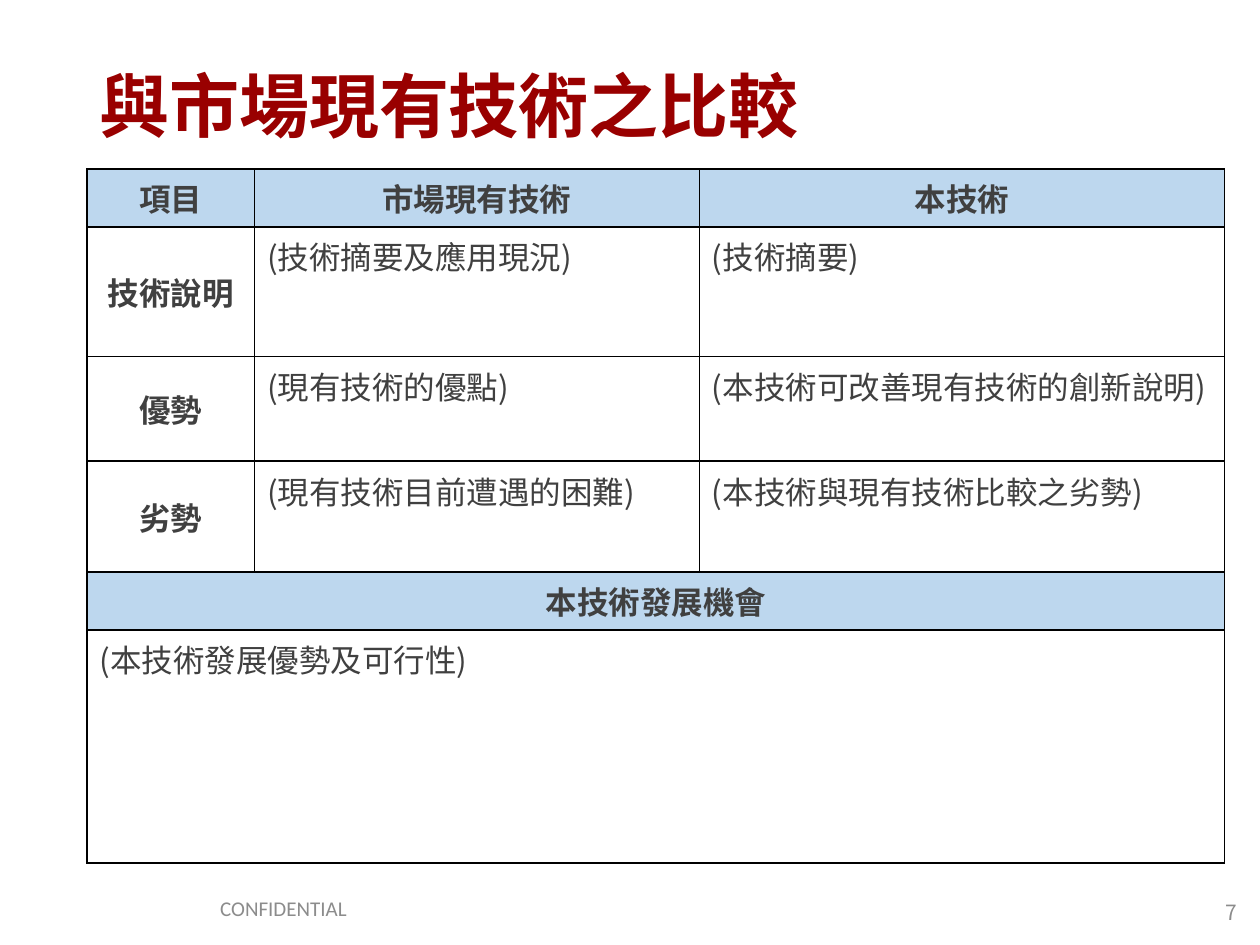
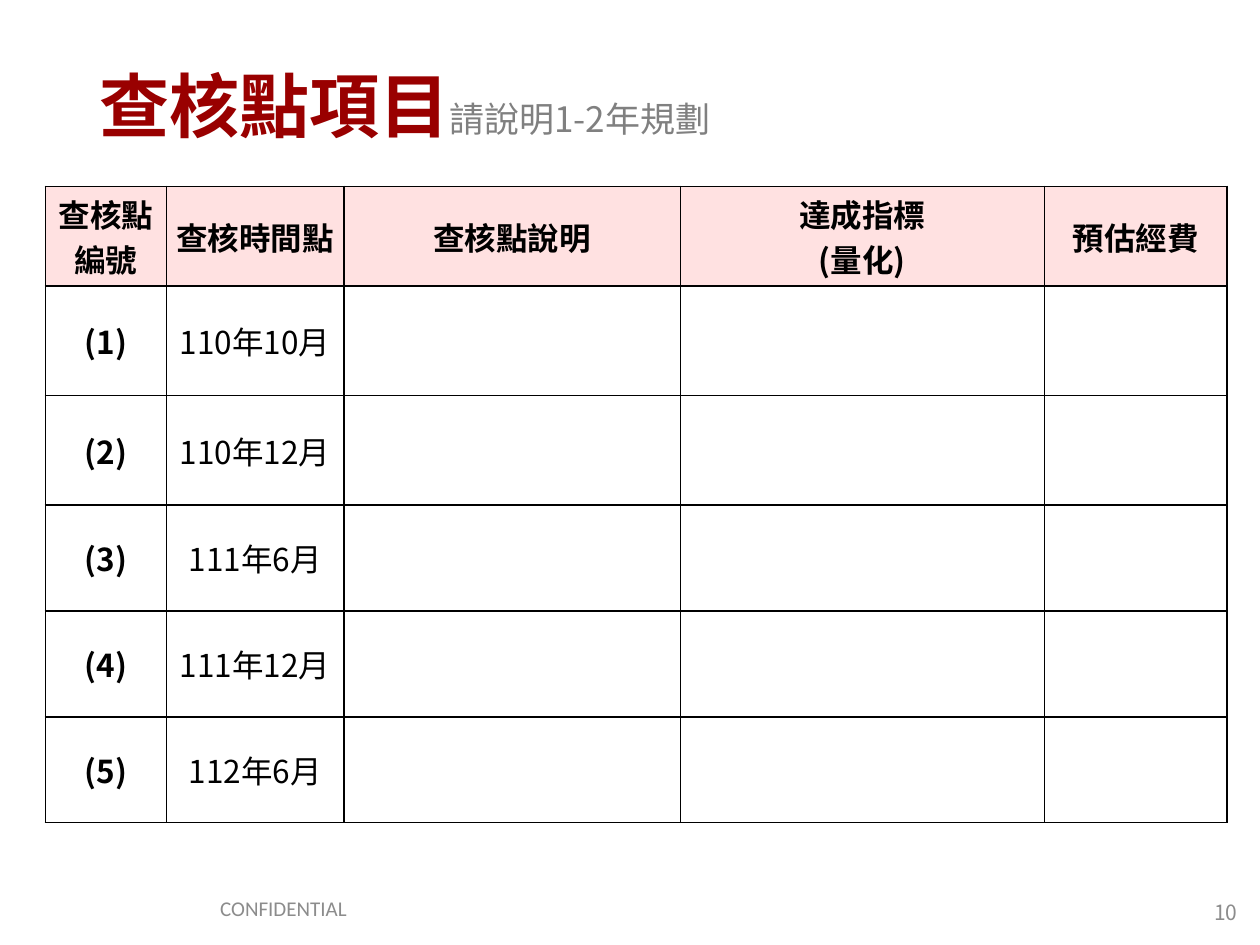
from dataclasses import dataclass
from typing import Optional

from lxml import etree
from pptx import Presentation
from pptx import util as u
from pptx.dml.color import RGBColor
from pptx.enum import text
from pptx.oxml.ns import qn

COLORS = {
    "title": "990000", "subtitle": "808080", "footer": "8C8C8C",
    "body": "404040", "black": "000000", "white": "FFFFFF",
    "blue": "BDD7EE", "pink": "FFE1E1",
}
CJK = "Noto Sans CJK SC"
LATIN = "Calibri"
CENTER, LEFT, RIGHT = text.PP_ALIGN.CENTER, text.PP_ALIGN.LEFT, text.PP_ALIGN.RIGHT
MIDDLE, TOP = text.MSO_ANCHOR.MIDDLE, text.MSO_ANCHOR.TOP


def grid(units: float) -> int:
    """The slide is 100 columns by 75 rows of square units."""
    return u.Inches(units / 10)


@dataclass
class Style:
    size: int
    color: str
    bold: bool = False
    font: str = CJK
    align: text.PP_ALIGN = LEFT


@dataclass
class CellSpec:
    words: str
    style: Style
    fill: Optional[str] = None
    anchor: text.MSO_ANCHOR = MIDDLE
    span: int = 1


@dataclass
class TableSpec:
    left: float
    top: float
    cols: list[float]
    rows: list[float]
    cells: list[list[CellSpec]]
    margins: tuple[float, float]


TITLE = Style(40, "title", True)
SUBTITLE = Style(20, "subtitle")
FOOTER = Style(12, "footer", font=LATIN, align=CENTER)
NUMBER = Style(12, "footer", align=RIGHT)
LABEL = Style(18, "body", True, align=CENTER)
NOTE = Style(18, "body")
HEAD = Style(18, "black", True, align=CENTER)
DATE = Style(18, "black", align=CENTER)


# Text
def style_run(r, style: Style) -> None:
    r.font.size = u.Pt(style.size)
    r.font.bold = style.bold
    r.font.color.rgb = RGBColor.from_string(COLORS[style.color])
    r.font.name = style.font
    ea = etree.SubElement(r.font._element, qn("a:ea"))
    ea.set("typeface", style.font)


def add_text(slide, left: float, top: float, width: float, height: float,
             parts: list[tuple[str, Style]], spacing: float = 1.0) -> None:
    sp = slide.shapes.add_textbox(*map(grid, (left, top, width, height)))
    tf = sp.text_frame
    tf.word_wrap = True
    tf.vertical_anchor = MIDDLE
    p = tf.paragraphs[0]
    p.alignment = parts[0][1].align
    p.line_spacing = spacing
    for words, style in parts:
        r = p.add_run()
        r.text = words
        style_run(r, style)


# Tables
def add_borders(cell) -> None:
    tc_pr = cell._tc.get_or_add_tcPr()
    for i, side in enumerate(("lnL", "lnR", "lnT", "lnB")):
        ln = etree.Element(qn(f"a:{side}"), w=str(u.Pt(1)))
        fill = etree.SubElement(ln, qn("a:solidFill"))
        etree.SubElement(fill, qn("a:srgbClr"), val=COLORS["black"])
        tc_pr.insert(i, ln)


def fill_cell(cell, spec: CellSpec, margins: tuple[float, float]) -> None:
    cell.margin_left = cell.margin_right = grid(margins[0])
    cell.margin_top = cell.margin_bottom = grid(margins[1])
    cell.vertical_anchor = spec.anchor
    if spec.fill:
        cell.fill.solid()
        cell.fill.fore_color.rgb = RGBColor.from_string(COLORS[spec.fill])
    else:
        cell.fill.background()
    cell.text_frame.text = spec.words
    for p in cell.text_frame.paragraphs:
        p.alignment = spec.style.align
        for r in p.runs:
            style_run(r, spec.style)


def add_table(slide, spec: TableSpec) -> None:
    frame = slide.shapes.add_table(
        len(spec.rows), len(spec.cols), grid(spec.left), grid(spec.top),
        grid(sum(spec.cols)), grid(sum(spec.rows)))
    table = frame.table
    table.first_row = table.horz_banding = False
    for col, width in zip(table.columns, spec.cols):
        col.width = grid(width)
    for row, height in zip(table.rows, spec.rows):
        row.height = grid(height)
    for i, row in enumerate(spec.cells):
        for j, item in enumerate(row):
            cell = table.cell(i, j)
            if item.span > 1:
                cell.merge(table.cell(i, j + item.span - 1))
            fill_cell(cell, item, spec.margins)
    for cell in table.iter_cells():
        add_borders(cell)


# Title, footer and page number shared by the slides
def add_page(prs, title: list[tuple[str, Style]], number: int, table: TableSpec) -> None:
    slide = prs.slides.add_slide(prs.slide_layouts[6])
    add_text(slide, 6.9, 4, 86.2, 9.4, title, spacing=0.9)
    add_table(slide, table)
    add_text(slide, 94.6, 70.4, 4.6, 4, [(str(number), NUMBER)])
    add_text(slide, 9.2, 70.1, 26.6, 4, [("CONFIDENTIAL", FOOTER)])


# Comparison with existing technology
def comparison_table() -> TableSpec:
    headings = ["項目", "市場現有技術", "本技術"]
    aspects = [
        ("技術說明", "(技術摘要及應用現況)", "(技術摘要)"),
        ("優勢", "(現有技術的優點)", "(本技術可改善現有技術的創新說明)"),
        ("劣勢", "(現有技術目前遭遇的困難)", "(本技術與現有技術比較之劣勢)"),
    ]
    cells = [[CellSpec(h, LABEL, "blue") for h in headings]]
    for name, *notes in aspects:
        cells.append([CellSpec(name, LABEL, "white")]
                     + [CellSpec(n, NOTE, "white", TOP) for n in notes])
    cells.append([CellSpec("本技術發展機會", LABEL, "blue", span=3)])
    cells.append([CellSpec("(本技術發展優勢及可行性)", NOTE, "white", TOP, span=3)])
    return TableSpec(6.9, 13.4, [13.3, 35.3, 41.7],
                     [4.6, 10.3, 8.3, 8.8, 4.6, 18.5], cells, (1, 0.5))


# Checkpoints
def checkpoint_table() -> TableSpec:
    headings = ["查核點\n編號", "查核時間點", "查核點說明", "達成指標\n(量化)", "預估經費"]
    dates = ["110年10月", "110年12月", "111年6月", "111年12月", "112年6月"]
    cells = [[CellSpec(h, HEAD, "pink") for h in headings]]
    for i, date in enumerate(dates, 1):
        cells.append([CellSpec(f"({i})", HEAD), CellSpec(date, DATE)]
                     + [CellSpec("", DATE)] * 3)
    return TableSpec(3.6, 14.8, [9.6, 14.1, 26.7, 28.9, 14.5],
                     [7.9] + [8.7] * 2 + [8.4] * 3, cells, (0.7, 0))


def main() -> None:
    prs = Presentation()
    prs.slide_width, prs.slide_height = grid(100), grid(75)
    add_page(prs, [("與市場現有技術之比較", TITLE)], 7, comparison_table())
    add_page(prs, [("查核點項目", TITLE), ("請說明1-2年規劃", SUBTITLE)], 10,
             checkpoint_table())
    prs.save("out.pptx")


if __name__ == "__main__":
    main()
